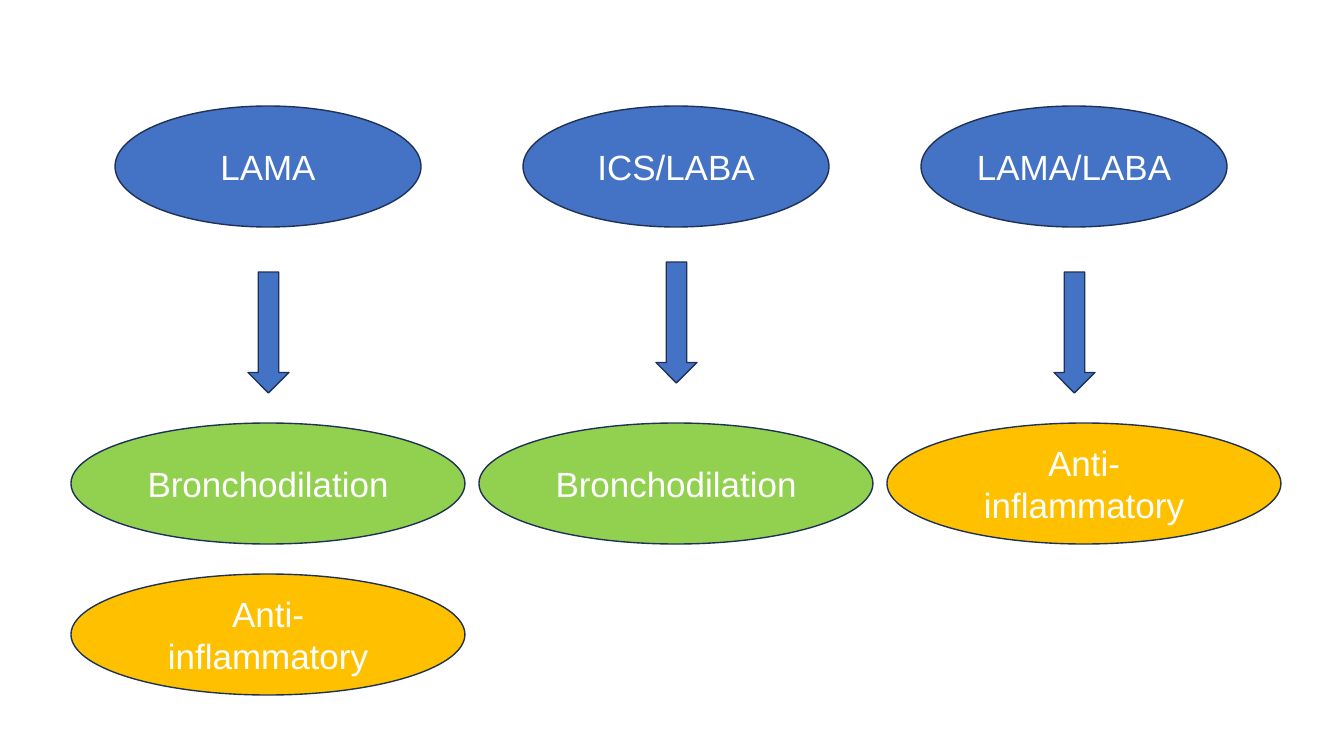
from pptx import Presentation
from pptx.dml.color import RGBColor
from pptx.enum.shapes import MSO_SHAPE
from pptx.enum.text import MSO_ANCHOR, PP_ALIGN
from pptx.util import Emu, Pt

BLUE = RGBColor(0x44, 0x72, 0xC4)
GREEN = RGBColor(0x92, 0xD0, 0x50)
AMBER = RGBColor(0xFF, 0xC0, 0x00)
NAVY = RGBColor(0x1E, 0x32, 0x56)
WHITE = RGBColor(0xFF, 0xFF, 0xFF)

SLIDE_WIDTH, SLIDE_HEIGHT = 1344, 756
DRUG_TOP, EFFECT_TOP, EFFECT_STEP = 106, 423, 151
BRONCHODILATION = ("Bronchodilation", GREEN)
ANTI_INFLAMMATORY = ("Anti-inflammatory", AMBER)

TREATMENTS = [
    ("LAMA", 268, 272, 268, [BRONCHODILATION, ANTI_INFLAMMATORY]),
    ("ICS/LABA", 676, 262, 676, [BRONCHODILATION]),
    ("LAMA/LABA", 1074, 272, 1084, [ANTI_INFLAMMATORY]),
]


def px(length):
    """Turn a length in pixels into EMU."""
    return Emu(round(length * 914400 / 100.8))


class TreatmentSlide:
    """Draws the treatment diagram in one shared style."""

    font_name = "Arial"
    font_size = Pt(25)
    height = 121
    drug_width, effect_width, arrow_width = 306, 394, 41

    def __init__(self, presentation):
        """Add a blank slide to the presentation."""
        self.slide = presentation.slides.add_slide(presentation.slide_layouts[6])

    def add_shape(self, kind, center, top, width, fill):
        """Add an outlined shape centred on a column."""
        shape = self.slide.shapes.add_shape(
            kind, px(center - width // 2), px(top), px(width), px(self.height)
        )
        shape.shadow.inherit = False
        shape.fill.solid()
        shape.fill.fore_color.rgb = fill
        shape.line.color.rgb = NAVY
        shape.line.width = Pt(1)
        return shape

    def add_ellipse(self, text, center, top, width, fill):
        """Add an ellipse with a centred label."""
        shape = self.add_shape(MSO_SHAPE.OVAL, center, top, width, fill)
        text_frame = shape.text_frame
        text_frame.word_wrap = True
        text_frame.vertical_anchor = MSO_ANCHOR.MIDDLE
        text_frame.text = text
        paragraph = text_frame.paragraphs[0]
        paragraph.alignment = PP_ALIGN.CENTER
        font = paragraph.runs[0].font
        font.name = self.font_name
        font.size = self.font_size
        font.color.rgb = WHITE

    def add_drug(self, text, center):
        """Add a drug ellipse in the top row."""
        self.add_ellipse(text, center, DRUG_TOP, self.drug_width, BLUE)

    def add_arrow(self, center, top):
        """Add a block arrow pointing down."""
        self.add_shape(MSO_SHAPE.DOWN_ARROW, center, top, self.arrow_width, BLUE)

    def add_effect(self, text, center, row, fill):
        """Add an effect ellipse in the given row."""
        top = EFFECT_TOP + row * EFFECT_STEP
        self.add_ellipse(text, center, top, self.effect_width, fill)


def main():
    """Build and save the slide."""
    presentation = Presentation()
    presentation.slide_width = px(SLIDE_WIDTH)
    presentation.slide_height = px(SLIDE_HEIGHT)
    treatment_slide = TreatmentSlide(presentation)
    for drug, center, arrow_top, effect_center, effects in TREATMENTS:
        treatment_slide.add_drug(drug, center)
        treatment_slide.add_arrow(center, arrow_top)
        for row, (effect, fill) in enumerate(effects):
            treatment_slide.add_effect(effect, effect_center, row, fill)
    presentation.save("out.pptx")


if __name__ == "__main__":
    main()
